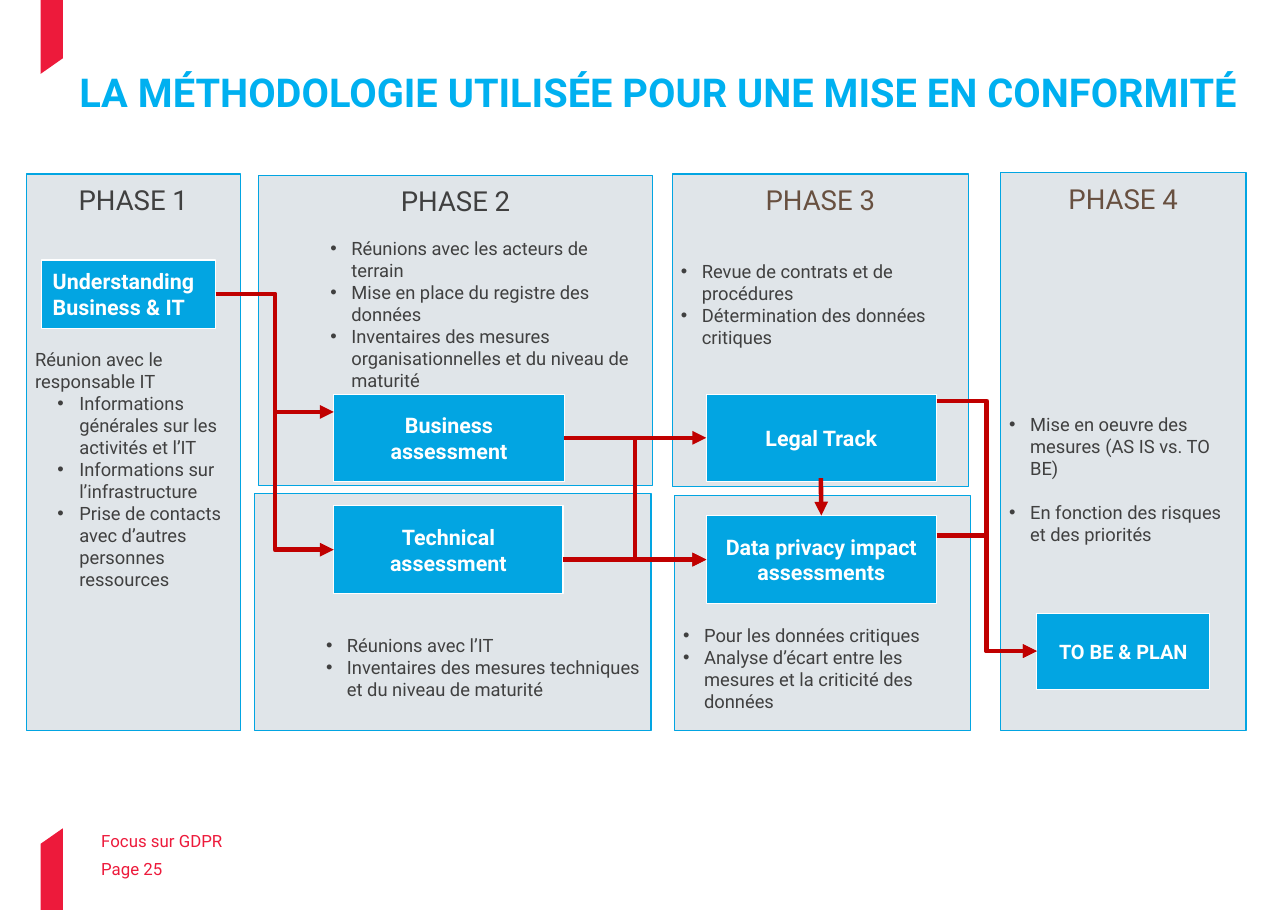
from dataclasses import dataclass
from typing import NamedTuple

from lxml.etree import SubElement
from pptx import Presentation
from pptx.dml.color import RGBColor as RGB
from pptx.enum.shapes import MSO_CONNECTOR as LINK, MSO_SHAPE as SHAPE
from pptx.enum.text import MSO_ANCHOR as ANCHOR, MSO_AUTO_SIZE as FIT, PP_ALIGN as ALIGN
from pptx.oxml.ns import qn
from pptx.util import Emu, Pt

PX = 9144  # 100 px to the inch
TOP, LEFT, RIGHT = 0, 1, 3
TITLE_ONLY = 5


def px(n):
    return Emu(n * PX)


def put(obj, values):
    for name, value in values.items():
        setattr(obj, name, value)


@dataclass(frozen=True)
class Theme:
    font: str = "Roboto"
    title: RGB = RGB(0x00, 0xB0, 0xF0)
    accent: RGB = RGB(0xED, 0x1A, 0x3B)
    panel: RGB = RGB(0xE0, 0xE5, 0xE9)
    box: RGB = RGB(0x02, 0xA5, 0xE2)
    white: RGB = RGB(0xFF, 0xFF, 0xFF)
    arrow: RGB = RGB(0xC0, 0x00, 0x00)
    text: RGB = RGB(0x40, 0x40, 0x40)
    brown: RGB = RGB(0x68, 0x50, 0x40)
    title_size: int = 26
    heading_size: int = 18
    box_size: int = 14
    plan_size: int = 13
    body_size: int = 12
    footer_size: int = 11


class Side(NamedTuple):
    """The middle of one side of a box."""
    box: object
    site: int


class Deck:
    def __init__(self, prs, theme):
        self.theme = theme
        self.slide = prs.slides.add_slide(prs.slide_layouts[TITLE_ONLY])
        self.shapes = self.slide.shapes

    def frame(self, sp, margins=(10, 5, 10, 5), anchor=ANCHOR.TOP):
        tf = sp.text_frame
        left, top, right, bottom = map(px, margins)
        put(tf, dict(word_wrap=True, auto_size=FIT.NONE, vertical_anchor=anchor,
                     margin_left=left, margin_top=top, margin_right=right, margin_bottom=bottom))
        return tf

    def para(self, tf, text, size, colour, bold=False, bullet=None, **layout):
        """Fill the empty first paragraph, or add one; bullet is (indent, hang) in px."""
        p = tf.paragraphs[0] if not tf.text else tf.add_paragraph()
        put(p, dict(alignment=ALIGN.LEFT) | layout)
        if bullet:
            indent, hang = bullet
            pPr = p._p.get_or_add_pPr()
            pPr.set("marL", str(px(indent)))
            pPr.set("indent", str(px(-hang)))
            SubElement(pPr, qn("a:buFont"), typeface="Arial")
            SubElement(pPr, qn("a:buChar"), char="•")
        r = p.add_run()
        r.text = text
        put(r.font, dict(name=self.theme.font, size=Pt(size), bold=bold))
        r.font.color.rgb = colour

    def title(self, text, place):
        sp = self.shapes.title
        put(sp, dict(zip(("left", "top", "width", "height"), map(px, place))))
        self.para(self.frame(sp, (0, 0, 0, 0)), text, self.theme.title_size,
                  self.theme.title, True, line_spacing=0.8)

    def label(self, text, place):
        sp = self.shapes.add_textbox(*map(px, place))
        self.para(self.frame(sp), text, self.theme.footer_size, self.theme.accent)

    def ribbon(self, start, *points):
        sp = self.shapes.build_freeform(*start, scale=PX)
        sp.add_line_segments(points)
        sp = sp.convert_to_shape()
        sp.shadow.inherit = False
        sp.fill.solid()
        sp.fill.fore_color.rgb = self.theme.accent
        sp.line.fill.background()

    def rect(self, place, fill, line):
        sp = self.shapes.add_shape(SHAPE.RECTANGLE, *map(px, place))
        sp.shadow.inherit = False
        sp.fill.solid()
        sp.fill.fore_color.rgb = fill
        sp.line.color.rgb = line
        sp.line.width = Pt(0.75)
        return sp

    def panel(self, place, bullets, lead, heading=None, colour=None,
              intro=None, bullet=(19, 19), between=0):
        """A phase panel; lead is the gap above its body, between the gap among bullets."""
        th = self.theme
        sp = self.rect(place, th.panel, th.box)
        tf = self.frame(sp, (8, 8 if heading else 8 + lead, 8, 8))
        gap = 0
        if heading:
            self.para(tf, heading, th.heading_size, colour or th.text, alignment=ALIGN.CENTER)
            gap = lead
        if intro:
            self.para(tf, intro, th.body_size, th.text, space_before=px(gap))
            gap = between
        for item in bullets:
            self.para(tf, item, th.body_size, th.text, bullet=bullet, space_before=px(gap))
            gap = between

    def box(self, text, place, size=None, align=ALIGN.CENTER):
        th = self.theme
        sp = self.rect(place, th.box, th.white)
        self.para(self.frame(sp, anchor=ANCHOR.MIDDLE), text, size or th.box_size,
                  th.white, True, alignment=align)
        return sp

    def arrow(self, start, end, kind=LINK.STRAIGHT):
        """Each end is an (x, y) point or a Side to join."""
        points = [(0, 0) if isinstance(e, Side) else e for e in (start, end)]
        c = self.shapes.add_connector(kind, *map(px, points[0] + points[1]))
        if isinstance(start, Side):
            c.begin_connect(*start)
        if isinstance(end, Side):
            c.end_connect(*end)
        c.line.color.rgb = self.theme.arrow
        c.line.width = Pt(3)
        spPr = c.element.spPr
        SubElement(spPr.find(qn("a:ln")), qn("a:tailEnd"), type="triangle")
        SubElement(spPr, qn("a:effectLst"))


def main():
    prs = Presentation()
    put(prs, dict(slide_width=px(1169), slide_height=px(827)))
    th = Theme()
    s = Deck(prs, th)

    s.ribbon((57, 53), (57, 0), (37, 0), (37, 67))
    s.ribbon((37, 766), (37, 826), (57, 826), (57, 752))
    s.label("Focus sur GDPR", (82, 749, 630, 29))
    s.label("Page 25", (82, 775, 110, 29))
    s.title("LA MÉTHODOLOGIE UTILISÉE POUR UNE MISE EN CONFORMITÉ", (72, 70, 1079, 70))

    s.panel((24, 158, 194, 505), [
        "Informations générales sur les activités et l’IT",
        "Informations sur l’infrastructure",
        "Prise de contacts avec d’autres personnes ressources",
    ], 120, "PHASE 1", intro="Réunion avec le responsable IT", bullet=(40, 20))
    s.panel((235, 159, 357, 282), [
        "Réunions avec les acteurs de terrain",
        "Mise en place du registre des données",
        "Inventaires des mesures organisationnelles et du niveau de maturité",
    ], 18, "PHASE 2", bullet=(76, 19))
    s.panel((231, 448, 360, 215), [
        "Réunions avec l’IT",
        "Inventaires des mesures techniques et du niveau de maturité",
    ], 120, bullet=(76, 19))
    s.panel((610, 158, 269, 284), [
        "Revue de contrats et de procédures",
        "Détermination des données critiques",
    ], 40, "PHASE 3", th.brown)
    s.panel((612, 450, 269, 213), [
        "Pour les données critiques",
        "Analyse d’écart entre les mesures et la criticité des données",
    ], 109)
    s.panel((908, 157, 223, 506), [
        "Mise en oeuvre des mesures (AS IS vs. TO BE)",
        "En fonction des risques et des priorités",
    ], 180, "PHASE 4", th.brown, between=20)

    s.box("Understanding Business & IT", (38, 236, 158, 62), align=ALIGN.LEFT)
    business = s.box("Business assessment", (303, 358, 209, 79))
    s.box("Technical assessment", (303, 459, 208, 80))
    legal = s.box("Legal Track", (641, 358, 209, 79))
    privacy = s.box("Data privacy impact assessments", (641, 468, 209, 80))
    s.box("TO BE & PLAN", (941, 557, 157, 69), th.plan_size)

    s.arrow(Side(business, RIGHT), Side(legal, LEFT))
    s.arrow((511, 508), Side(privacy, LEFT))
    s.arrow((745, 434), Side(privacy, TOP))
    s.arrow(Side(business, RIGHT), Side(privacy, LEFT), LINK.ELBOW)
    for y in (364, 486):
        s.arrow((850, y), (941, 591), LINK.ELBOW)
    for y in (374, 499):
        s.arrow((196, 267), (303, y), LINK.ELBOW)

    prs.save("out.pptx")


if __name__ == "__main__":
    main()
